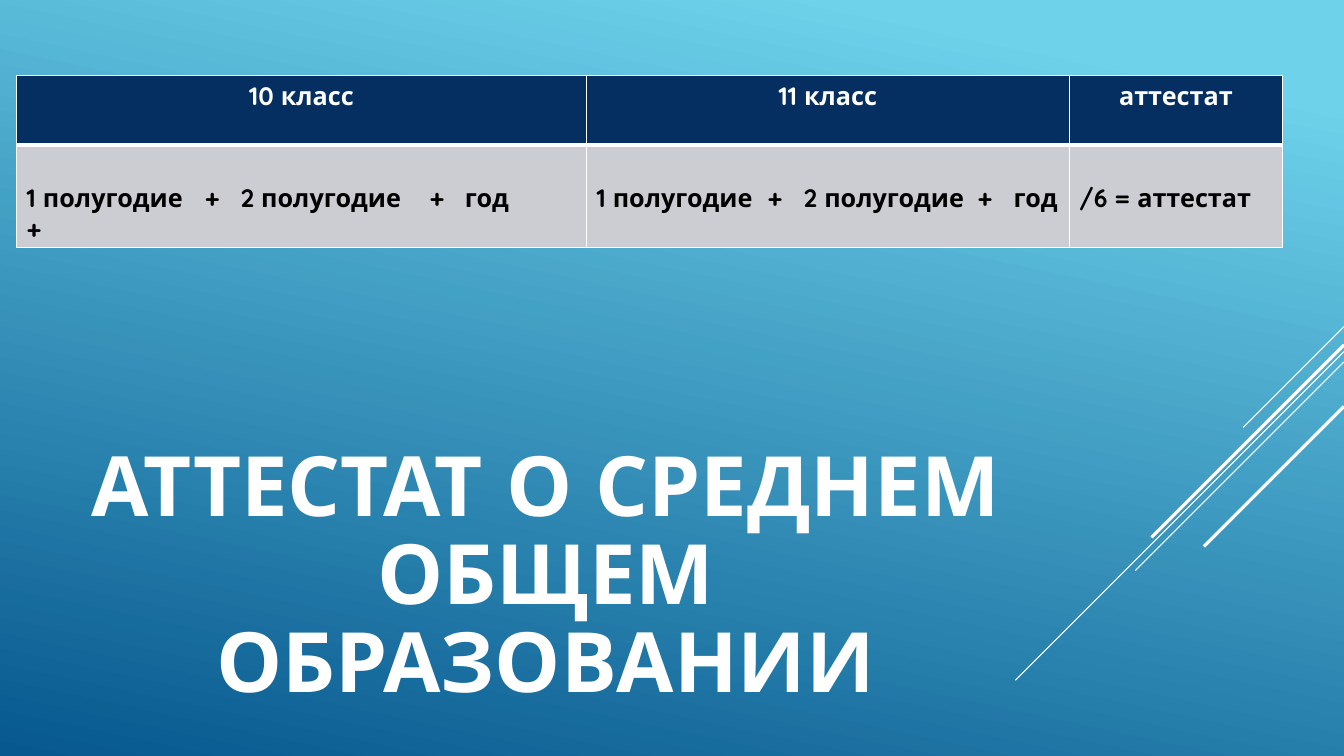
from dataclasses import dataclass

import lxml.etree
import pptx
import pptx.dml.color
import pptx.enum.shapes
import pptx.enum.text
import pptx.oxml.ns
import pptx.util

Cm = pptx.util.Cm
Pt = pptx.util.Pt
qn = pptx.oxml.ns.qn
CENTER = pptx.enum.text.PP_ALIGN.CENTER

FONT = "Quicksand"
WHITE, BLACK, NAVY, GREY = "FFFFFF", "000000", "052F61", "CCCDD2"
WIDE, HIGH = 33.87, 19.05


@dataclass
class Ray:
    """A 45° line running down and left from the right edge."""
    top: float
    span: float
    width: float


@dataclass
class Column:
    width: float
    head: str
    body: str
    tabs: tuple[float, ...] = ()


RAYS = [
    Ray(8.23, 2.54, 0.75),
    Ray(8.86, 8.28, 0.75),
    Ray(9.12, 5.26, 0.75),
    Ray(8.69, 4.85, 2.25),
    Ray(10.24, 3.53, 2.25),
]
COLUMNS = [
    Column(14.36, "10 класс", "1 полугодие\t+\t2 полугодие\t+\tгод\n+",
           (4.49, 5.39, 10.15, 11.04)),
    Column(12.17, "11 класс", "1 полугодие\t+\t2 полугодие\t+\tгод",
           (4.31, 5.22, 9.6, 10.51)),
    Column(5.37, "аттестат", "/6 = аттестат"),
]
ROWS = (1.76, 2.49)


def rgb(code: str) -> pptx.dml.color.RGBColor:
    return pptx.dml.color.RGBColor.from_string(code)


def write(para, text: str, size: float, color: str) -> None:
    for i, part in enumerate(text.split("\n")):
        if i:
            para.add_line_break()
        run = para.add_run()
        run.text = part
        run.font.name = FONT
        run.font.size = Pt(size)
        run.font.bold = True
        run.font.color.rgb = rgb(color)


def set_tabs(para, stops: tuple[float, ...]) -> None:
    tabs = lxml.etree.SubElement(para._p.get_or_add_pPr(), qn("a:tabLst"))
    for stop in stops:
        lxml.etree.SubElement(tabs, qn("a:tab"), pos=str(int(Cm(stop))), algn="l")


def edge(cell, top: float, bottom: float) -> None:
    """Give the cell white borders, with its own top and bottom widths."""
    props = cell._tc.get_or_add_tcPr()
    sides = {"L": 1, "R": 1, "T": top, "B": bottom}
    for i, (side, width) in enumerate(sides.items()):
        line = lxml.etree.Element(qn(f"a:ln{side}"), w=str(int(Pt(width))))
        fill = lxml.etree.SubElement(line, qn("a:solidFill"))
        lxml.etree.SubElement(fill, qn("a:srgbClr"), val=WHITE)
        props.insert(i, line)


def paint(cell, color: str) -> None:
    cell.fill.solid()
    cell.fill.fore_color.rgb = rgb(color)


def draw_back(slide) -> None:
    fill = slide.background.fill
    fill.gradient()
    fill.gradient_angle = 258
    for stop, (place, color) in zip(fill.gradient_stops,
                                    [(0.1, "6ED2EB"), (1, "06588E")]):
        stop.position = place
        stop.color.rgb = rgb(color)


def draw_ray(slide, ray: Ray) -> None:
    line = slide.shapes.add_connector(
        pptx.enum.shapes.MSO_CONNECTOR.STRAIGHT, Cm(WIDE), Cm(ray.top),
        Cm(WIDE - ray.span), Cm(ray.top + ray.span))
    line.line.color.rgb = rgb(WHITE)
    line.line.width = Pt(ray.width)
    lxml.etree.SubElement(line._element.spPr, qn("a:effectLst"))


def draw_title(slide) -> None:
    box = slide.shapes.add_textbox(Cm(1.9), Cm(12.47), Cm(23.7), Cm(4.19))
    frame = box.text_frame
    frame.word_wrap = True
    frame.vertical_anchor = pptx.enum.text.MSO_ANCHOR.MIDDLE
    para = frame.paragraphs[0]
    para.alignment = CENTER
    para.line_spacing = 0.88
    write(para, "АТТЕСТАТ О СРЕДНЕМ ОБЩЕМ ОБРАЗОВАНИИ", 59.4, WHITE)


def draw_table(slide) -> None:
    width = sum(col.width for col in COLUMNS)
    table = slide.shapes.add_table(
        len(ROWS), len(COLUMNS), Cm(0.42), Cm(1.9), Cm(width), Cm(sum(ROWS))).table
    table.horz_banding = False
    for row, height in zip(table.rows, ROWS):
        row.height = Cm(height)
    for i, col in enumerate(COLUMNS):
        table.columns[i].width = Cm(col.width)

        head = table.cell(0, i)
        paint(head, NAVY)
        edge(head, 1, 3)
        para = head.text_frame.paragraphs[0]
        para.alignment = CENTER
        write(para, col.head, 18, WHITE)

        body = table.cell(1, i)
        paint(body, GREY)
        edge(body, 3, 1)
        body.margin_top = Cm(0.93)
        para = body.text_frame.paragraphs[0]
        if col.tabs:
            set_tabs(para, col.tabs)
        write(para, col.body, 18, BLACK)


def main() -> None:
    deck = pptx.Presentation()
    deck.slide_width, deck.slide_height = Cm(WIDE), Cm(HIGH)
    slide = deck.slides.add_slide(deck.slide_layouts[6])
    draw_back(slide)
    for ray in RAYS:
        draw_ray(slide, ray)
    draw_title(slide)
    draw_table(slide)
    deck.save("out.pptx")


if __name__ == "__main__":
    main()
